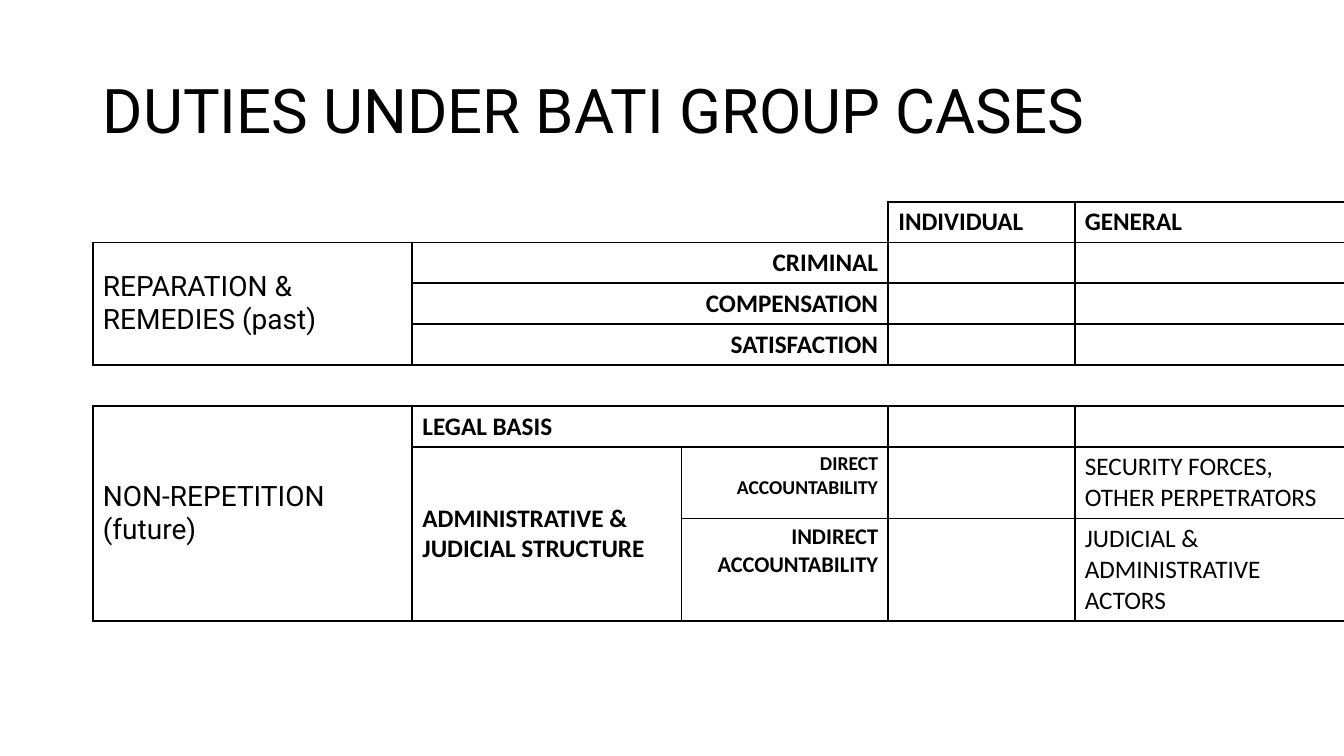
from pptx import Presentation
from pptx import util as u
from pptx.dml.color import RGBColor
from pptx.enum import text
from pptx.oxml.ns import qn
from lxml import etree

COLORS = {"ink": "000000"}
L, R = text.PP_ALIGN.LEFT, text.PP_ALIGN.RIGHT
TOP, MID = text.MSO_ANCHOR.TOP, text.MSO_ANCHOR.MIDDLE


def style(p, font, size, bold, align):
    p.alignment = align
    for r in p.runs:
        r.font.name, r.font.size, r.font.bold = font, u.Pt(size), bold
        r.font.color.rgb = RGBColor.from_string(COLORS["ink"])


def set_borders(cell, sides):
    tcPr = cell._tc.get_or_add_tcPr()
    for side in "LRTB":
        ln = etree.SubElement(tcPr, qn(f"a:ln{side}"), w=str(u.Pt(1.5)))
        if side in sides:
            fill = etree.SubElement(ln, qn("a:solidFill"))
            etree.SubElement(fill, qn("a:srgbClr"), val=COLORS["ink"])
        else:
            etree.SubElement(ln, qn("a:noFill"))


prs = Presentation()
prs.slide_width, prs.slide_height = u.Inches(13.33), u.Inches(7.5)
s = prs.slides.add_slide(prs.slide_layouts[5])

# Title
title = s.shapes.title
title.left, title.top = u.Inches(0.92), u.Inches(0.4)
title.width, title.height = u.Inches(11.5), u.Inches(1.45)
tf = title.text_frame
tf.text = "DUTIES UNDER BATI GROUP CASES"
tf.word_wrap = True
tf.auto_size = text.MSO_AUTO_SIZE.NONE
tf.vertical_anchor = MID
tf.paragraphs[0].line_spacing = 0.9
style(tf.paragraphs[0], "Roboto", 44, False, L)

# Table grid
col_widths = [3.17, 2.67, 0.5, 1.55, 1.85, 2.68]
row_heights = [0.39] * 6 + [0.55, 0.62]
frame = s.shapes.add_table(len(row_heights), len(col_widths), u.Inches(0.92), u.Inches(2),
                           u.Inches(sum(col_widths)), u.Inches(sum(row_heights)))
table = frame.table
table.first_row = table.horz_banding = False
for col, width in zip(table.columns, col_widths):
    col.width = u.Inches(width)
for row, height in zip(table.rows, row_heights):
    row.height = u.Inches(height)

# Borders: the top-left corner and the spacer row stay open
SPACER = 4
for i in range(len(row_heights)):
    for j in range(len(col_widths)):
        sides = "LRTB"
        if i == SPACER:
            sides = "TB"
        elif i == 0 and j < 4:
            sides = "RB" if j == 3 else "B"
        cell = table.cell(i, j)
        set_borders(cell, sides)
        cell.fill.background()

# Merged cells: row, column, last row, last column
merges = [(0, 1, 0, 2), (1, 0, 3, 0), (5, 0, 7, 0), (6, 1, 7, 1), (6, 2, 6, 3), (7, 2, 7, 3)]
merges += [(i, 1, i, 3) for i in range(1, 6)]
for i, j, last_i, last_j in merges:
    table.cell(i, j).merge(table.cell(last_i, last_j))

# Cell text: row, column, wording, font, size, bold, alignment, anchor
labels = [
    (0, 4, "INDIVIDUAL", "Calibri", 18, True, L, TOP),
    (0, 5, "GENERAL", "Calibri", 18, True, L, TOP),
    (1, 0, "REPARATION & REMEDIES (past)", "Roboto", 20, False, L, MID),
    (1, 1, "CRIMINAL", "Calibri", 18, True, R, TOP),
    (2, 1, "COMPENSATION", "Calibri", 18, True, R, TOP),
    (3, 1, "SATISFACTION", "Calibri", 18, True, R, TOP),
    (5, 0, "NON-REPETITION\n(future)", "Roboto", 20, False, L, MID),
    (5, 1, "LEGAL BASIS", "Calibri", 18, True, L, TOP),
    (6, 1, "ADMINISTRATIVE & JUDICIAL STRUCTURE", "Calibri", 18, True, L, MID),
    (6, 2, "DIRECT ACCOUNTABILITY", "Calibri", 14, True, R, TOP),
    (6, 5, "SECURITY FORCES, OTHER PERPETRATORS", "Calibri", 18, False, L, TOP),
    (7, 2, "INDIRECT ACCOUNTABILITY", "Calibri", 16, True, R, TOP),
    (7, 5, "JUDICIAL & ADMINISTRATIVE ACTORS", "Calibri", 18, False, L, TOP),
]
for i, j, words, font, size, bold, align, anchor in labels:
    cell = table.cell(i, j)
    cell.text_frame.text = words
    cell.vertical_anchor = anchor
    for p in cell.text_frame.paragraphs:
        style(p, font, size, bold, align)

prs.save("out.pptx")
